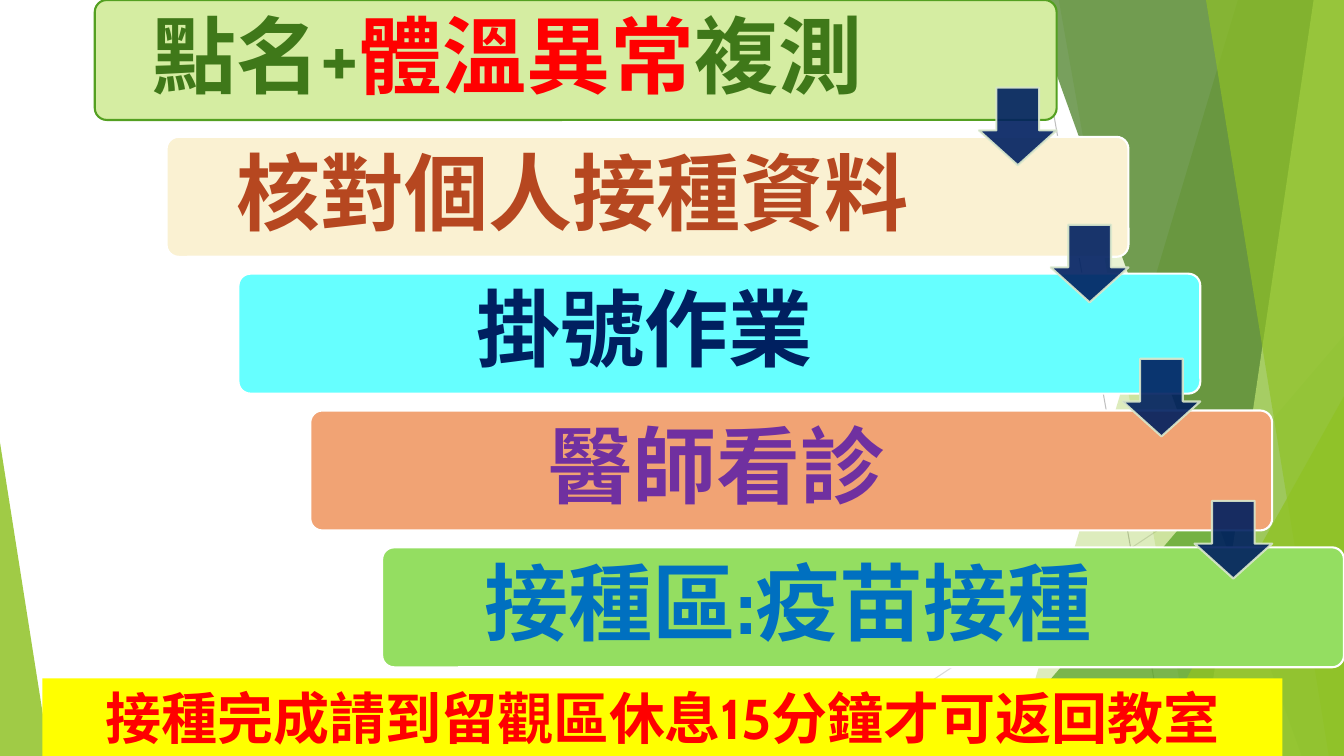
from lxml.etree import SubElement
from pptx import Presentation
from pptx.dml.color import RGBColor
from pptx.enum.shapes import MSO_CONNECTOR, MSO_SHAPE as SHAPE
from pptx.enum.text import MSO_ANCHOR, MSO_AUTO_SIZE, PP_ALIGN
from pptx.oxml.ns import qn
from pptx.util import Inches, Pt

COLORS = {
    "lime": "90C226", "green": "54A021", "forest": "3F7819", "pale": "C0E474",
    "red": "FF0000", "rust": "B64720", "navy": "002060", "purple": "7030A0",
    "blue": "0070C0", "yellow": "FFFF00", "white": "FFFFFF", "mist": "DBE9CD",
    "bar1": "D5EDA2", "bar2": "FAF1D2", "bar3": "66FFFF", "bar4": "F1A374",
    "bar5": "94DE61", "grey": "BFBFBF", "light_grey": "D9D9D9",
}

# runs, font, bar fill, bar outline, right text margin
STEPS = [
    ([("點名+", "forest"), ("體溫異常", "red"), ("複測", "forest")],
     "Cabin", "bar1", "green", 1.6),
    ([("核對個人接種資料", "rust")], "Courier New", "bar2", "white", 1.74),
    ([("掛號作業", "navy")], "Cabin", "bar3", "white", 1.74),
    ([("醫師看診", "purple")], "Cabin", "bar4", "white", 1.74),
    ([("接種區:疫苗接種", "blue")], "Cabin", "bar5", "white", 1.74),
]
REMINDER = "接種完成請到留觀區休息15分鐘才可返回教室"
ARROW_TOPS = [0.87, 2.23, 3.56, 4.97]

W, H, TOP = 13.33, 7.5, -0.01
BAR_X, BAR_Y, BAR_W, BAR_H = 0.94, 0, 9.54, 1.19
STEP_X, STEP_Y = 0.7125, 1.3575
ARROW = 0.77

RAYS = [((10.25, 0), (11.58, H), "grey"), ((W, 4.03), (8.12, H), "light_grey")]
# Facets reach the right edge: (top x, bottom x); triangles: (box, apex)
FACETS = [
    ((12.28, 10.04), None, "lime", 30),
    ((10.5, 11.83), None, "lime", 20),
    ((9.77, 3.33, 3.56, 4.17), 1, "green", 72),
    ((10.21, 12.91), None, "forest", 70),
    ((13.03, 11.92), None, "pale", 70),
    ((11.96, 13.18), None, "lime", 65),
    ((11.34, 3.93, 1.99, 3.57), 1, "lime", 80),
    ((0, 4.39, 0.49, 3.11), 0, "lime", 85),
]


def rgb(name):
    return RGBColor.from_string(COLORS[name])


def paint(fill, color, opacity=100):
    fill.solid()
    fill.fore_color.rgb = rgb(color)
    if opacity < 100:
        # The color element is the only srgbClr below this fill's parent here
        clr = fill._xPr.find(qn("a:solidFill")).find(qn("a:srgbClr"))
        SubElement(clr, qn("a:alpha")).set("val", str(opacity * 1000))


def style(s, color, opacity=100, line=None):
    s.shadow.inherit = False
    paint(s.fill, color, opacity)
    if line:
        s.line.width = Pt(1.5)
        paint(s.line.fill, line, opacity)
    else:
        s.line.fill.background()


def add_shape(kind, box, *adjustments):
    s = shapes.add_shape(kind, *map(Inches, box))
    for i, value in enumerate(adjustments):
        s.adjustments[i] = value
    return s


def write(tf, runs, font, size):
    tf.word_wrap = True
    p = tf.paragraphs[0]
    p.alignment = PP_ALIGN.CENTER
    p.font.name, p.font.size, p.font.bold = font, Pt(size), True
    for text, color in runs:
        r = p.add_run()
        r.text = text
        r.font.color.rgb = rgb(color)
    return p


prs = Presentation()
prs.slide_width, prs.slide_height = Inches(W), Inches(H)
shapes = prs.slides.add_slide(prs.slide_layouts[6]).shapes

for start, end, color in RAYS:
    ray = shapes.add_connector(MSO_CONNECTOR.STRAIGHT, *map(Inches, start + end))
    ray.line.color.rgb = rgb(color)
    ray.line.width = Pt(0.75)
    SubElement(ray._element.spPr, qn("a:effectLst"))

for geometry, apex, color, opacity in FACETS:
    if apex is None:
        top_x, bottom_x = geometry
        corners = [(top_x, TOP), (W, TOP), (W, H), (bottom_x, H)]
        points = [(Inches(x), Inches(y)) for x, y in corners]
        outline = shapes.build_freeform(*points[0])
        outline.add_line_segments(points[1:], close=True)
        s = outline.convert_to_shape()
    else:
        s = add_shape(SHAPE.ISOSCELES_TRIANGLE, geometry, apex)
    style(s, color, opacity)

for i, (runs, font, fill, line, right_margin) in enumerate(STEPS):
    box = (BAR_X + i * STEP_X, BAR_Y + i * STEP_Y, BAR_W, BAR_H)
    bar = add_shape(SHAPE.ROUNDED_RECTANGLE, box, 0.1)
    style(bar, fill, line=line)
    tf = bar.text_frame
    tf.margin_left = tf.margin_top = tf.margin_bottom = Inches(0.25)
    tf.margin_right = Inches(right_margin)
    tf.vertical_anchor = MSO_ANCHOR.MIDDLE
    write(tf, runs, font, 60).line_spacing = 0.9

for i, top in enumerate(ARROW_TOPS):
    left = BAR_X + i * STEP_X + BAR_W - ARROW
    arrow = add_shape(SHAPE.DOWN_ARROW, (left, top, ARROW, ARROW), 0.55, 0.45)
    # Adjustments run head length first for this preset
    arrow.adjustments[0], arrow.adjustments[1] = 0.55, 0.45
    style(arrow, "navy", 90, "mist")

banner = shapes.add_textbox(*map(Inches, (0.42, 6.73, 12.3, 0.77)))
paint(banner.fill, "yellow")
write(banner.text_frame, [(REMINDER, "red")], "Cabin", 40)
banner.text_frame.auto_size = MSO_AUTO_SIZE.SHAPE_TO_FIT_TEXT

prs.save("out.pptx")
